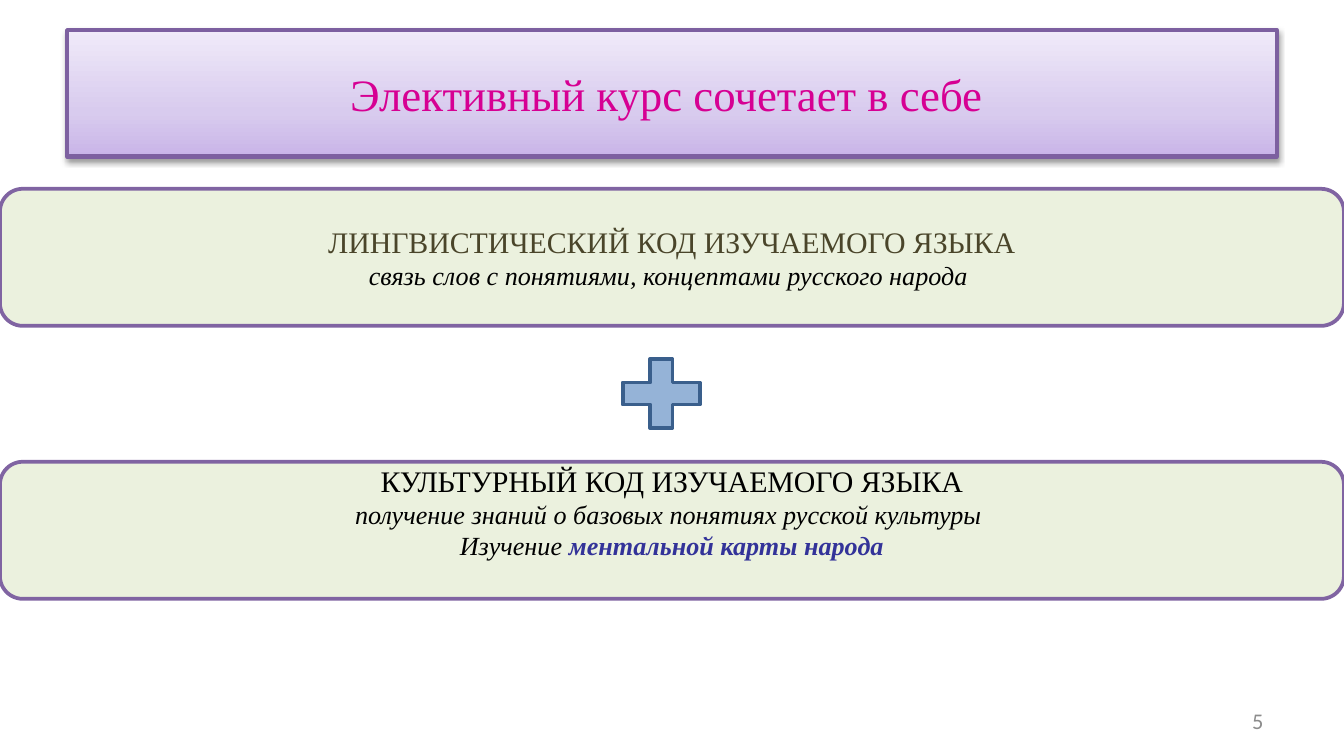
from lxml.etree import SubElement
from pptx import Presentation
from pptx.dml.color import RGBColor
from pptx.enum.shapes import MSO_SHAPE
from pptx.enum.text import MSO_ANCHOR, PP_ALIGN
from pptx.oxml.ns import qn
from pptx.util import Cm, Pt

SERIF = "Times New Roman"
BLACK = "000000"
WIDTH, HEIGHT = 25.4, 14.29
CARD_TOP, CARD_STEP, CARD_HEIGHT = 3.57, 5.16, 2.59

# A paragraph is a list of runs: text, size, colour, italic, bold
TITLE = [[("Элективный курс сочетает в себе ", 24, "D60093", False, False)]]
CARDS = [
    [
        [("ЛИНГВИСТИЧЕСКИЙ КОД ИЗУЧАЕМОГО ЯЗЫКА", 16, "4A452A", False, False)],
        [("связь слов с понятиями, концептами русского народа ", 14, BLACK, True, False)],
    ],
    [
        [("КУЛЬТУРНЫЙ КОД ИЗУЧАЕМОГО ЯЗЫКА", 16, BLACK, False, False)],
        [("получение знаний о базовых понятиях русской культуры ", 14, BLACK, True, False)],
        [("Изучение ", 14, BLACK, True, False),
         ("ментальной карты народа", 14, "333399", True, True)],
    ],
]
CARD_INSETS = [(0.13, 0.13), (0, 0.7)]  # top, bottom
PAGE_NUMBER = [[("5", 12, "8C8C8C", False, False)]]
TITLE_GRADIENT = [(0, "C9B5E8"), (35, "D8CBEE"), (100, "F0EAF9")]


def rgb(hex_colour):
    return RGBColor.from_string(hex_colour)


def write(shape, paragraphs, align=PP_ALIGN.CENTER, font=SERIF):
    frame = shape.text_frame
    frame.word_wrap = True
    frame.vertical_anchor = MSO_ANCHOR.MIDDLE
    for index, runs in enumerate(paragraphs):
        paragraph = frame.add_paragraph() if index else frame.paragraphs[0]
        paragraph.alignment = align
        for text, size, colour, italic, bold in runs:
            run = paragraph.add_run()
            run.text = text
            run.font.name = font
            run.font.size = Pt(size)
            run.font.color.rgb = rgb(colour)
            run.font.italic = italic
            run.font.bold = bold


def add_outlined(slide, preset, box, fill, line, line_width=2):
    shape = slide.shapes.add_shape(preset, *map(Cm, box))
    shape.shadow.inherit = False
    shape.fill.solid()
    shape.fill.fore_color.rgb = rgb(fill)
    shape.line.color.rgb = rgb(line)
    shape.line.width = Pt(line_width)
    return shape


def add_colour(parent, colour):
    return SubElement(parent, qn("a:srgbClr"), val=colour)


def shade_upwards(shape, stops):
    """Fill with a gradient whose first stop is at the bottom."""
    shape.fill.gradient()
    shape.fill.gradient_angle = 90
    stop_list = shape.element.spPr.find(qn("a:gradFill")).find(qn("a:gsLst"))
    for old_stop in list(stop_list):
        stop_list.remove(old_stop)
    for position, colour in stops:
        add_colour(SubElement(stop_list, qn("a:gs"), pos=str(position * 1000)), colour)


def drop_shadow(shape):
    effects = shape.element.spPr.find(qn("a:effectLst"))
    shadow = SubElement(effects, qn("a:outerShdw"), blurRad=str(Pt(3.1)),
                        dist=str(Pt(1.6)), dir="5400000", rotWithShape="0")
    SubElement(add_colour(shadow, BLACK), qn("a:alpha"), val="38000")


def main():
    deck = Presentation()
    deck.slide_width, deck.slide_height = Cm(WIDTH), Cm(HEIGHT)
    slide = deck.slides.add_slide(deck.slide_layouts[6])

    title = add_outlined(slide, MSO_SHAPE.RECTANGLE, (1.27, 0.57, 22.86, 2.39),
                         "D8CBEE", "7D60A0", 2.25)
    shade_upwards(title, TITLE_GRADIENT)
    drop_shadow(title)
    write(title, TITLE)

    for index, (paragraphs, (inset_top, inset_bottom)) in enumerate(zip(CARDS, CARD_INSETS)):
        card_top = CARD_TOP + index * CARD_STEP
        card = add_outlined(slide, MSO_SHAPE.ROUNDED_RECTANGLE,
                            (0, card_top, WIDTH, CARD_HEIGHT), "EBF1DE", "8064A2")
        write(card, paragraphs)
        card.text_frame.margin_top = Cm(inset_top)
        card.text_frame.margin_bottom = Cm(inset_bottom)

    add_outlined(slide, MSO_SHAPE.MATH_PLUS, (11.51, 6.55, 1.98, 1.78), "95B3D7", "3A5F8C")

    page_number = slide.shapes.add_textbox(Cm(18.21), Cm(13.24), Cm(5.92), Cm(0.76))
    write(page_number, PAGE_NUMBER, PP_ALIGN.RIGHT, "Calibri")

    deck.save("out.pptx")


if __name__ == "__main__":
    main()
